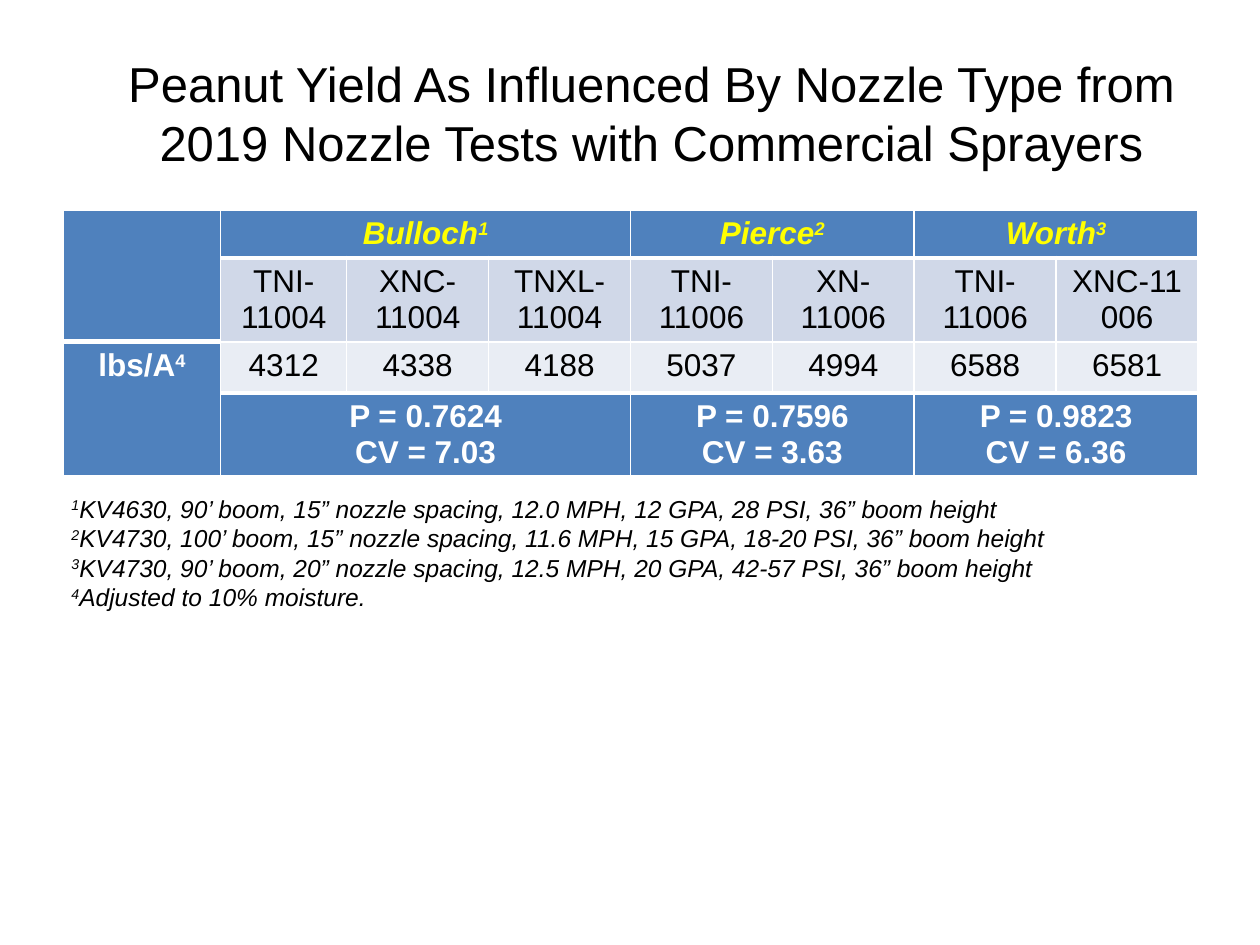
from lxml import etree
from pptx import Presentation
from pptx.dml.color import RGBColor
from pptx.enum.text import MSO_ANCHOR as Anchor, MSO_AUTO_SIZE as AutoSize, PP_ALIGN as Align
from pptx.oxml.ns import qn
from pptx.util import Cm, Pt

BLACK = RGBColor(0x00, 0x00, 0x00)
WHITE = RGBColor(0xFF, 0xFF, 0xFF)
YELLOW = RGBColor(0xFF, 0xFF, 0x00)
BLUE = RGBColor(0x4F, 0x81, 0xBD)
BLUE_LIGHT = RGBColor(0xD0, 0xD8, 0xE8)
BLUE_PALE = RGBColor(0xE9, 0xED, 0xF4)

THIN, THICK = 1, 3
COLUMNS = [3.18, 2.54] + [2.86] * 6
ROWS = [0.97, 1.69, 1.03, 1.67]

TESTS = [
    ("Bulloch", "1", "P = 0.7624", "CV = 7.03",
     [(["TNI-", "11004"], "4312"), (["XNC-", "11004"], "4338"), (["TNXL-", "11004"], "4188")]),
    ("Pierce", "2", "P = 0.7596", "CV = 3.63",
     [(["TNI-", "11006"], "5037"), (["XN-", "11006"], "4994")]),
    ("Worth", "3", "P = 0.9823", "CV = 6.36",
     [(["TNI-", "11006"], "6588"), (["XNC-11006"], "6581")]),
]
NOTES = [
    "KV4630, 90’ boom, 15” nozzle spacing, 12.0 MPH, 12 GPA, 28 PSI, 36” boom height",
    "KV4730, 100’ boom, 15” nozzle spacing, 11.6 MPH, 15 GPA, 18-20 PSI, 36” boom height",
    "KV4730, 90’ boom, 20” nozzle spacing, 12.5 MPH, 20 GPA, 42-57 PSI, 36” boom height",
    "Adjusted to 10% moisture.",
]


class SlideBuilder:
    font = "Arial"

    def __init__(self, slide):
        self.s = slide

    def add_text(self, tf, paragraphs, size, color=BLACK, bold=False, italic=False, align=Align.CENTER):
        for i, runs in enumerate(paragraphs):
            p = tf.add_paragraph() if i else tf.paragraphs[0]
            p.alignment = align
            for text, raised in runs:
                r = p.add_run()
                r.text = text
                r.font.name = self.font
                r.font.size = Pt(size)
                r.font.bold = bold
                r.font.italic = italic
                r.font.color.rgb = color
                if raised:
                    r.font._element.set("baseline", "30000")

    def text_box(self, left, top, width, height, paragraphs, size, wrap=True, anchor=Anchor.TOP, **style):
        sp = self.s.shapes.add_textbox(Cm(left), Cm(top), Cm(width), Cm(height))
        tf = sp.text_frame
        tf.word_wrap = wrap
        tf.auto_size = AutoSize.NONE if wrap else AutoSize.SHAPE_TO_FIT_TEXT
        tf.vertical_anchor = anchor
        self.add_text(tf, paragraphs, size, **style)

    def table(self, left, top, columns, rows):
        frame = self.s.shapes.add_table(len(rows), len(columns), Cm(left), Cm(top),
                                        Cm(sum(columns)), Cm(sum(rows)))
        table = frame.table
        for column, width in zip(table.columns, columns):
            column.width = Cm(width)
        for row, height in zip(table.rows, rows):
            row.height = Cm(height)
        return table

    def borders(self, cell, top, bottom):
        tc_pr = cell._tc.get_or_add_tcPr()
        widths = {"a:lnL": THIN, "a:lnR": THIN, "a:lnT": top, "a:lnB": bottom}
        for i, (tag, width) in enumerate(widths.items()):
            ln = etree.Element(qn(tag), w=str(Pt(width)))
            fill = etree.SubElement(ln, qn("a:solidFill"))
            etree.SubElement(fill, qn("a:srgbClr"), val=str(WHITE))
            tc_pr.insert(i, ln)

    def cell(self, table, row, col, paragraphs, fill, span=(1, 1), top=THIN, bottom=THIN, **style):
        last_row, last_col = row + span[0] - 1, col + span[1] - 1
        for r in range(row, last_row + 1):
            for c in range(col, last_col + 1):
                part = table.cell(r, c)
                part.fill.solid()
                part.fill.fore_color.rgb = fill
                self.borders(part, top if r == row else THIN, bottom if r == last_row else THIN)
        cell = table.cell(row, col)
        if span != (1, 1):
            cell.merge(table.cell(last_row, last_col))
        self.add_text(cell.text_frame, paragraphs, 18, **style)


def plain(*lines):
    return [[(line, False)] for line in lines]


def main():
    prs = Presentation()
    prs.slide_width, prs.slide_height = Cm(25.4), Cm(19.05)
    b = SlideBuilder(prs.slides.add_slide(prs.slide_layouts[6]))

    title = "Peanut Yield As Influenced By Nozzle Type from 2019 Nozzle Tests with Commercial Sprayers"
    b.text_box(1.7, 0.94, 22.86, 2.67, plain(title), 28, anchor=Anchor.MIDDLE)

    table = b.table(1.27, 4.23, COLUMNS, ROWS)
    b.cell(table, 0, 0, [], BLUE, span=(2, 1), bottom=THICK)
    b.cell(table, 2, 0, [[("lbs/A", False), ("4", True)]], BLUE, span=(2, 1), top=THICK,
           color=WHITE, bold=True)
    col = 1
    for county, mark, p_value, cv, nozzles in TESTS:
        span = (1, len(nozzles))
        b.cell(table, 0, col, [[(county, False), (mark, True)]], BLUE, span, bottom=THICK,
               color=YELLOW, bold=True, italic=True)
        b.cell(table, 3, col, plain(p_value, cv), BLUE, span, top=THICK, color=WHITE, bold=True)
        for i, (nozzle, pounds) in enumerate(nozzles, col):
            b.cell(table, 1, i, plain(*nozzle), BLUE_LIGHT, top=THICK)
            b.cell(table, 2, i, plain(pounds), BLUE_PALE, bottom=THICK)
        col += len(nozzles)

    notes = [[(str(i), True), (note, False)] for i, note in enumerate(NOTES, 1)]
    b.text_box(1.19, 9.83, 20.47, 2.64, notes, 14, wrap=False, italic=True, align=Align.LEFT)

    prs.save("out.pptx")


if __name__ == "__main__":
    main()
